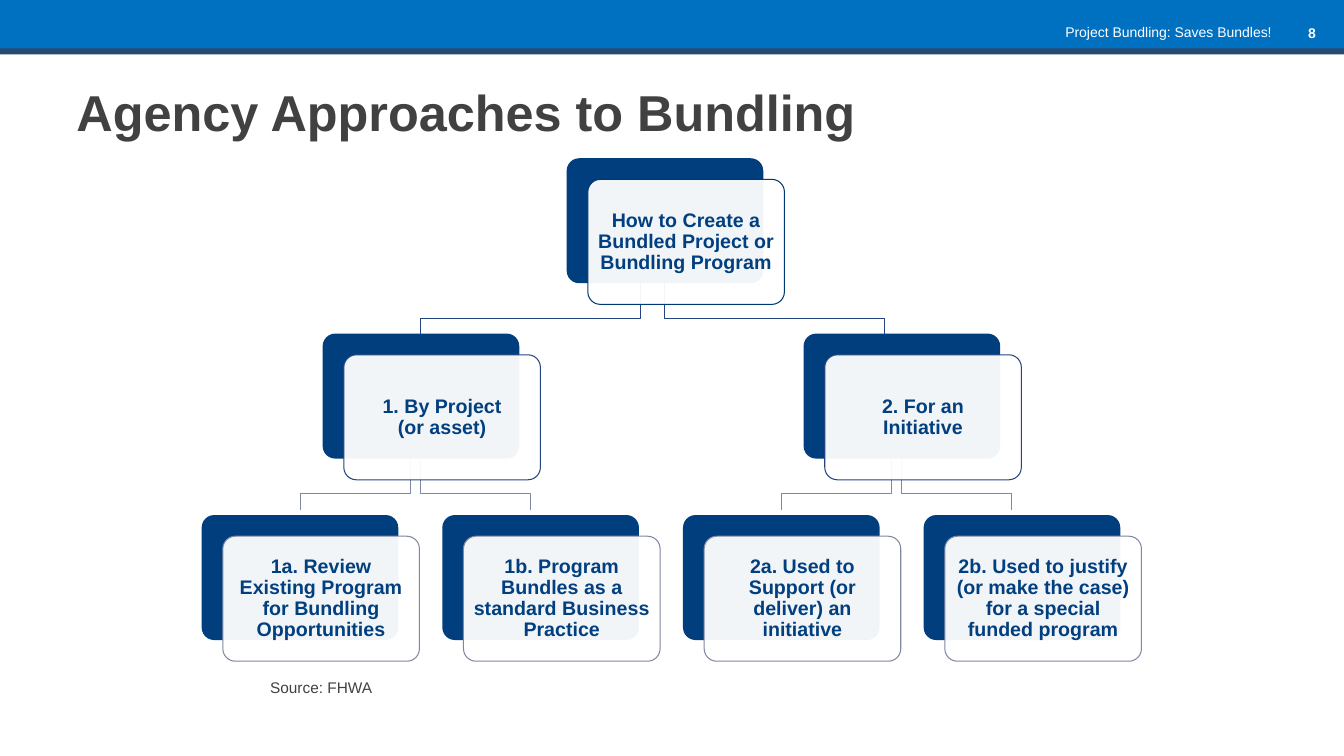
"""Build the slide on agency approaches to bundling as a two-level tree."""
from dataclasses import dataclass

from lxml.etree import SubElement
from pptx import Presentation
from pptx.dml.color import RGBColor
from pptx.enum.shapes import MSO_SHAPE as Preset
from pptx.enum.text import MSO_ANCHOR as Anchor, PP_ALIGN as Align
from pptx.oxml.ns import qn
from pptx.shapes.autoshape import Shape
from pptx.slide import Slide
from pptx.text.text import TextFrame
from pptx.util import Inches, Pt

COLORS = {
    "banner": "0070C0", "stripe": "284971", "white": "FFFFFF", "gray": "414142",
    "navy": "003E7E", "label": "013F7F",
    "root": "003872", "branch": "224480", "leaf": "7F87A3",
}
FONT = "Arial"
CARD_WIDTH, CARD_HEIGHT = 1.95, 1.24
CARD_SHIFT = 0.21
BRANCH_TOP, LEAF_TOP = 3.31, 5.11
LEAF_LEFT, LEAF_STEP = 2.0, 2.387
STEM, DROP = 0.35, 0.16


@dataclass(frozen=True)
class Card:
    left: float
    top: float
    lines: tuple[str, ...]
    level: str


@dataclass(frozen=True)
class Fork:
    center: float
    top: float
    gap: float
    reach: float
    level: str


@dataclass(frozen=True)
class Label:
    text: str
    left: float
    top: float
    width: float
    height: float
    size: int
    color: str
    bold: bool = False
    align: Align = Align.LEFT
    anchor: Anchor = Anchor.TOP


LEAVES = (
    "1a. Review Existing Program for Bundling Opportunities",
    "1b. Program Bundles as a standard Business Practice",
    "2a. Used to Support (or deliver) an initiative",
    "2b. Used to justify (or make the case) for a special funded program",
)
CARDS = [
    Card(5.62, 1.57, ("How to Create a Bundled Project or Bundling Program",), "root"),
    Card(3.2, BRANCH_TOP, ("1. By Project", "(or asset)"), "branch"),
    Card(7.97, BRANCH_TOP, ("2. For an", "Initiative"), "branch"),
] + [
    Card(LEAF_LEFT + index * LEAF_STEP, LEAF_TOP, (text,), "leaf")
    for index, text in enumerate(LEAVES)
]
FORKS = (
    Fork(8.94, 4.55, 0.1, 1.09, "leaf"),
    Fork(4.17, 4.55, 0.1, 1.09, "leaf"),
    Fork(6.59, 2.81, 0.24, 2.18, "branch"),
)
LABELS = (
    Label("8", 12.15, 0.19, 1, 0.4, 10, "white", True, Align.RIGHT),
    Label("Project Bundling: Saves Bundles!", 8.78, 0.18, 3.93, 0.27, 10, "white",
          align=Align.RIGHT),
    Label("Agency Approaches to Bundling", 0.66, 0.7, 12, 0.8, 36, "gray", True,
          anchor=Anchor.MIDDLE),
    Label("Source: FHWA", 2.58, 6.68, 1.47, 0.29, 11, "gray"),
)


def color(name: str) -> RGBColor:
    return RGBColor.from_string(COLORS[name])


def style_text(frame: TextFrame, size: int, name: str, bold: bool, align: Align) -> None:
    for para in frame.paragraphs:
        para.alignment = align
        for span in para.runs:
            span.font.name = FONT
            span.font.size = Pt(size)
            span.font.bold = bold
            span.font.color.rgb = color(name)


def add_panel(page: Slide, preset: Preset, left: float, top: float,
              width: float, height: float, fill: str) -> Shape:
    panel = page.shapes.add_shape(
        preset, Inches(left), Inches(top), Inches(width), Inches(height))
    panel.shadow.inherit = False
    panel.fill.solid()
    panel.fill.fore_color.rgb = color(fill)
    panel.line.fill.background()
    return panel


def add_label(page: Slide, label: Label) -> None:
    box = page.shapes.add_textbox(Inches(label.left), Inches(label.top),
                                  Inches(label.width), Inches(label.height))
    frame = box.text_frame
    frame.word_wrap = True
    frame.vertical_anchor = label.anchor
    frame.text = label.text
    style_text(frame, label.size, label.color, label.bold, label.align)


def add_fork(page: Slide, fork: Fork) -> None:
    bend = fork.top + STEM
    for stem, side in ((fork.center - fork.gap, -1), (fork.center, 1)):
        end = stem + side * fork.reach
        builder = page.shapes.build_freeform(Inches(stem), Inches(fork.top))
        corners = ((stem, bend), (end, bend), (end, bend + DROP))
        builder.add_line_segments(
            [(Inches(x), Inches(y)) for x, y in corners], close=False)
        elbow = builder.convert_to_shape()
        elbow.shadow.inherit = False
        elbow.fill.background()
        elbow.line.color.rgb = color(fork.level)
        elbow.line.width = Pt(0.85)


def add_card(page: Slide, card: Card) -> None:
    back = add_panel(page, Preset.ROUNDED_RECTANGLE, card.left, card.top,
                     CARD_WIDTH, CARD_HEIGHT, "navy")
    front = add_panel(page, Preset.ROUNDED_RECTANGLE, card.left + CARD_SHIFT,
                      card.top + CARD_SHIFT, CARD_WIDTH, CARD_HEIGHT, "white")
    for panel in (back, front):
        panel.adjustments[0] = 0.1
    tint = front._element.spPr.find(f"{qn('a:solidFill')}/{qn('a:srgbClr')}")
    SubElement(tint, qn("a:alpha"), val="95000")
    front.line.color.rgb = color(card.level)
    front.line.width = Pt(0.75)

    frame = front.text_frame
    frame.word_wrap = True
    frame.vertical_anchor = Anchor.MIDDLE
    frame.margin_left = frame.margin_right = Inches(0.05)
    frame.margin_top = frame.margin_bottom = Inches(0.05)
    frame.text = "\n".join(card.lines)
    style_text(frame, 14, "label", True, Align.CENTER)
    for para in frame.paragraphs:
        para.line_spacing = 0.9


def main() -> None:
    deck = Presentation()
    deck.slide_width, deck.slide_height = Inches(13.33), Inches(7.5)
    page = deck.slides.add_slide(deck.slide_layouts[6])
    add_panel(page, Preset.RECTANGLE, 0, -0.04, 13.33, 0.57, "banner")
    add_panel(page, Preset.RECTANGLE, 0, 0.48, 13.33, 0.06, "stripe")
    for label in LABELS:
        add_label(page, label)
    for fork in FORKS:
        add_fork(page, fork)
    for card in CARDS:
        add_card(page, card)
    deck.save("out.pptx")


if __name__ == "__main__":
    main()
